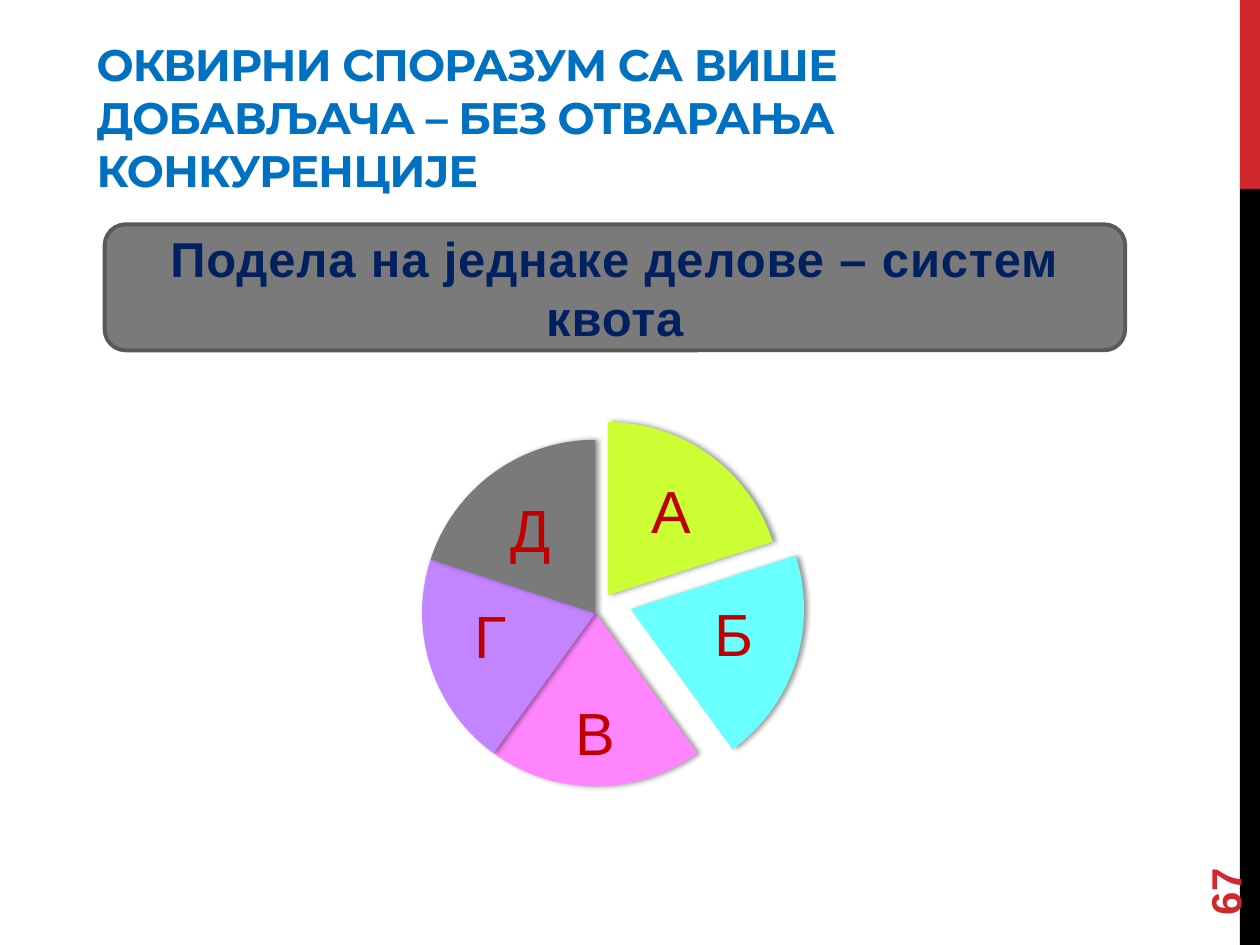
from lxml import etree
from pptx import Presentation
from pptx.dml.color import RGBColor as RGB
from pptx.enum.shapes import MSO_SHAPE as SHAPE
from pptx.enum.text import MSO_ANCHOR as ANCHOR, PP_ALIGN as ALIGN
from pptx.oxml.ns import qn
from pptx.util import Pt

COLORS = {
    "red": "D1282E", "black": "000000", "title": "0070C0", "navy": "002060",
    "label": "C00000", "gray": "7A7A7A", "edge": "5A5A5A", "lime": "CCFF33",
    "cyan": "69FFFF", "pink": "FF85FF", "violet": "C285FF",
}
TITLE = "ОКВИРНИ СПОРАЗУМ СА ВИШЕ ДОБАВЉАЧА – БЕЗ ОТВАРАЊА КОНКУРЕНЦИЈЕ"
BANNER = "Подела на једнаке делове – систем квота"
PAGE = "67"

BARS = [("red", 0, 108), ("black", 108, 432)]  # colour, top, height
PIE_X, PIE_Y, PIE_D = 241.2, 251.3, 198
# letter, colour, shift from the pie centre, label box
SLICES = [
    ("A", "lime", (7.2, -10.1), (349.9, 270.7, 67, 46.1)),
    ("Б", "cyan", (20.2, -2.2), (390.2, 339.1, 59, 49.7)),
    ("В", "pink", (0, 0), (304.6, 399.6, 70.6, 42.5)),
    ("Г", "violet", (0, 0), (250.6, 340.6, 59, 49.7)),
    ("Д", "gray", (0, 0), (270, 281.5, 67, 46.1)),
]


def color(name):
    return RGB.from_string(COLORS[name])


def add_shape(slide, kind, box, fill):
    shape = slide.shapes.add_shape(kind, *map(Pt, box))
    shape.shadow.inherit = False
    shape.fill.solid()
    shape.fill.fore_color.rgb = color(fill)
    shape.line.fill.background()
    return shape


def set_text(shape, text, size, ink, font="Arial", bold=False, align=ALIGN.LEFT,
             anchor=ANCHOR.MIDDLE, track=0):
    """Fill the frame with one paragraph; track is letter spacing in points."""
    frame = shape.text_frame
    frame.word_wrap = True
    frame.vertical_anchor = anchor
    para = frame.paragraphs[0]
    para.text = text
    para.alignment = align
    para.font.name, para.font.size, para.font.bold = font, Pt(size), bold
    para.font.color.rgb = color(ink)
    if track:
        para.runs[0].font._element.set("spc", str(round(track * 100)))
    return frame


def add_text(slide, box, *args, **style):
    shape = slide.shapes.add_textbox(*map(Pt, box))
    set_text(shape, *args, **style)
    return shape


def add_shadow(shape):
    """Put a soft dark shadow to the right of the shape."""
    effects = shape._element.spPr.find(qn("a:effectLst"))
    outer = etree.SubElement(effects, qn("a:outerShdw"), blurRad=str(Pt(3.1)),
                             dist=str(Pt(1.8)), dir="0", rotWithShape="0")
    shade = etree.SubElement(outer, qn("a:srgbClr"), val=COLORS["black"])
    etree.SubElement(shade, qn("a:alpha"), val="40000")


def add_slices(slide):
    step = 360 / len(SLICES)
    for i, (letter, fill, (dx, dy), box) in enumerate(SLICES):
        piece = add_shape(slide, SHAPE.PIE, (PIE_X + dx, PIE_Y + dy, PIE_D, PIE_D), fill)
        for side in (0, 1):
            angle = (270 + (i + side) * step) % 360
            piece.adjustments[side] = angle * 0.6  # 60000 units a degree
        add_shadow(piece)
        label = add_text(slide, box, letter, 34, "label", align=ALIGN.CENTER)
        frame = label.text_frame
        frame.margin_left = frame.margin_right = Pt(3.6)
        frame.paragraphs[0].line_spacing = 0.9


def main():
    deck = Presentation()
    deck.slide_width, deck.slide_height = Pt(720), Pt(540)
    slide = deck.slides.add_slide(deck.slide_layouts[6])

    for fill, top, height in BARS:
        add_shape(slide, SHAPE.RECTANGLE, (708.5, top, 11.5, height), fill)
    add_text(slide, (48.2, 18, 595.4, 72), TITLE, 25.2, "title", font="Montserrat",
             bold=True, anchor=ANCHOR.TOP, track=-0.6)
    page = add_text(slide, (648, 463.7, 103.7, 28.8), PAGE, 24, "red", bold=True)
    page.rotation = 270
    add_slices(slide)

    banner = add_shape(slide, SHAPE.ROUNDED_RECTANGLE, (59.8, 128.2, 583.2, 72), "gray")
    banner.line.color.rgb = color("edge")
    banner.line.width = Pt(2.25)
    set_text(banner, BANNER, 28, "navy", bold=True, align=ALIGN.CENTER, track=0.5)

    deck.save("out.pptx")


if __name__ == "__main__":
    main()
